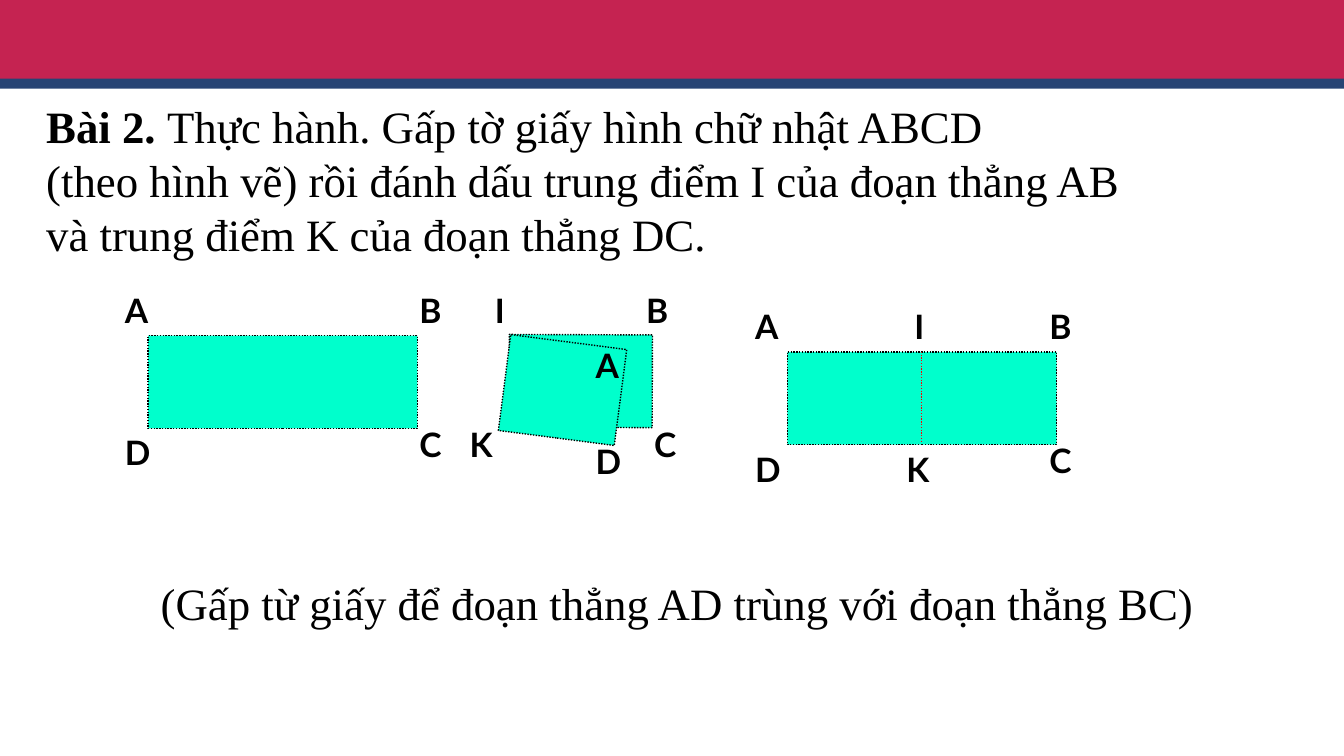
import pptx
import pptx.util
import pptx.dml.color
import pptx.enum.dml
import pptx.enum.shapes
import pptx.enum.text
import pptx.oxml

Inches = pptx.util.Inches
COLORS = {
    "band": "C52351",
    "rule": "274474",
    "paper": "00FFCC",
    "ink": "000000",
    "fold": "FF0000",
}
SERIF = "Times New Roman"
SANS = "Lato"


def tint(name):
    return pptx.dml.color.RGBColor.from_string(COLORS[name])


def dot(line, name):
    line.color.rgb = tint(name)
    line.width = pptx.util.Pt(1)
    line.dash_style = pptx.enum.dml.MSO_LINE.ROUND_DOT


def add_rect(host, box, fill, dotted=False, turn=0):
    rect = host.shapes.add_shape(
        pptx.enum.shapes.MSO_SHAPE.RECTANGLE, *map(Inches, box))
    rect.shadow.inherit = False
    rect.fill.solid()
    rect.fill.fore_color.rgb = tint(fill)
    rect.rotation = turn
    if dotted:
        dot(rect.line, "ink")
    else:
        rect.line.fill.background()


def add_text(host, box, rows, font, size, wrap=True, center=False):
    frame = host.shapes.add_textbox(*map(Inches, box)).text_frame
    frame.word_wrap = wrap
    frame.auto_size = pptx.enum.text.MSO_AUTO_SIZE.SHAPE_TO_FIT_TEXT
    for index, row in enumerate(rows):
        para = frame.add_paragraph() if index else frame.paragraphs[0]
        align = pptx.enum.text.PP_ALIGN
        para.alignment = align.CENTER if center else align.LEFT
        for words, bold in row:
            run = para.add_run()
            run.text = words
            run.font.name = font
            run.font.size = pptx.util.Pt(size)
            run.font.bold = bold
            run.font.color.rgb = tint("ink")


def add_marks(host, marks):
    for name, left, top in marks:
        add_text(host, (left, top, 1.42, 0.5), [[(name, True)]], SANS, 24)


def add_fold(host, x, top, end):
    fold = host.shapes.add_connector(
        pptx.enum.shapes.MSO_CONNECTOR.STRAIGHT,
        Inches(x), Inches(top), Inches(x), Inches(end))
    dot(fold.line, "fold")
    props = fold._element.spPr
    props.append(pptx.oxml.parse_xml(
        '<a:effectLst xmlns:a='
        '"http://schemas.openxmlformats.org/drawingml/2006/main"/>'))


def add_sheet(slide, x, y, left, folded=False):
    group = slide.shapes.add_group_shape()
    add_rect(group, (x, y, 2.67, 0.92), "paper", dotted=True)
    if folded:
        add_fold(group, x + 1.33, y, y + 0.9)
    right = left + 2.92
    add_marks(group, [
        ("A", left, y - 0.5),
        ("B", right, y - 0.5),
        ("C", right, y + 0.83),
        ("D", left, y + 0.91),
    ])
    if folded:
        add_marks(group, [
            ("K", left + 1.5, y + 0.91),
            ("I", left + 1.58, y - 0.5),
        ])


def add_turn(slide):
    group = slide.shapes.add_group_shape()
    add_rect(group, (5.05, 3.32, 1.42, 0.92), "paper", True, 0.2)
    add_rect(group, (5, 3.39, 1.16, 0.96), "paper", True, 7.4)
    add_marks(group, [
        ("D", 5.81, 4.33),
        ("I", 4.81, 2.83),
        ("K", 4.56, 4.16),
        ("B", 6.31, 2.83),
        ("C", 6.39, 4.16),
        ("A", 5.81, 3.37),
    ])


def main():
    deck = pptx.Presentation()
    deck.slide_width = Inches(13.33)
    deck.slide_height = Inches(7.5)
    slide = deck.slides.add_slide(deck.slide_layouts[6])

    add_rect(slide, (0, -0.02, 13.33, 0.82), "band")
    add_rect(slide, (0, 0.78, 13.33, 0.1), "rule")
    add_text(slide, (0.36, 0.93, 11.06, 1.72), [
        [("Bài 2. ", True),
         ("Thực hành. Gấp tờ giấy hình chữ nhật ABCD", False)],
        [("(theo hình vẽ) rồi đánh dấu trung điểm I của đoạn thẳng AB",
          False)],
        [("và trung điểm K của đoạn thẳng DC.", False)],
    ], SERIF, 32, wrap=False)
    add_sheet(slide, 1.47, 3.33, 1.14)
    add_turn(slide)
    add_text(slide, (1.47, 5.66, 10.5, 0.64), [
        [("(Gấp từ giấy để đoạn thẳng AD trùng với đoạn thẳng BC)", False)],
    ], SERIF, 32, center=True)
    add_sheet(slide, 7.81, 3.49, 7.39, folded=True)
    deck.save("out.pptx")


if __name__ == "__main__":
    main()
